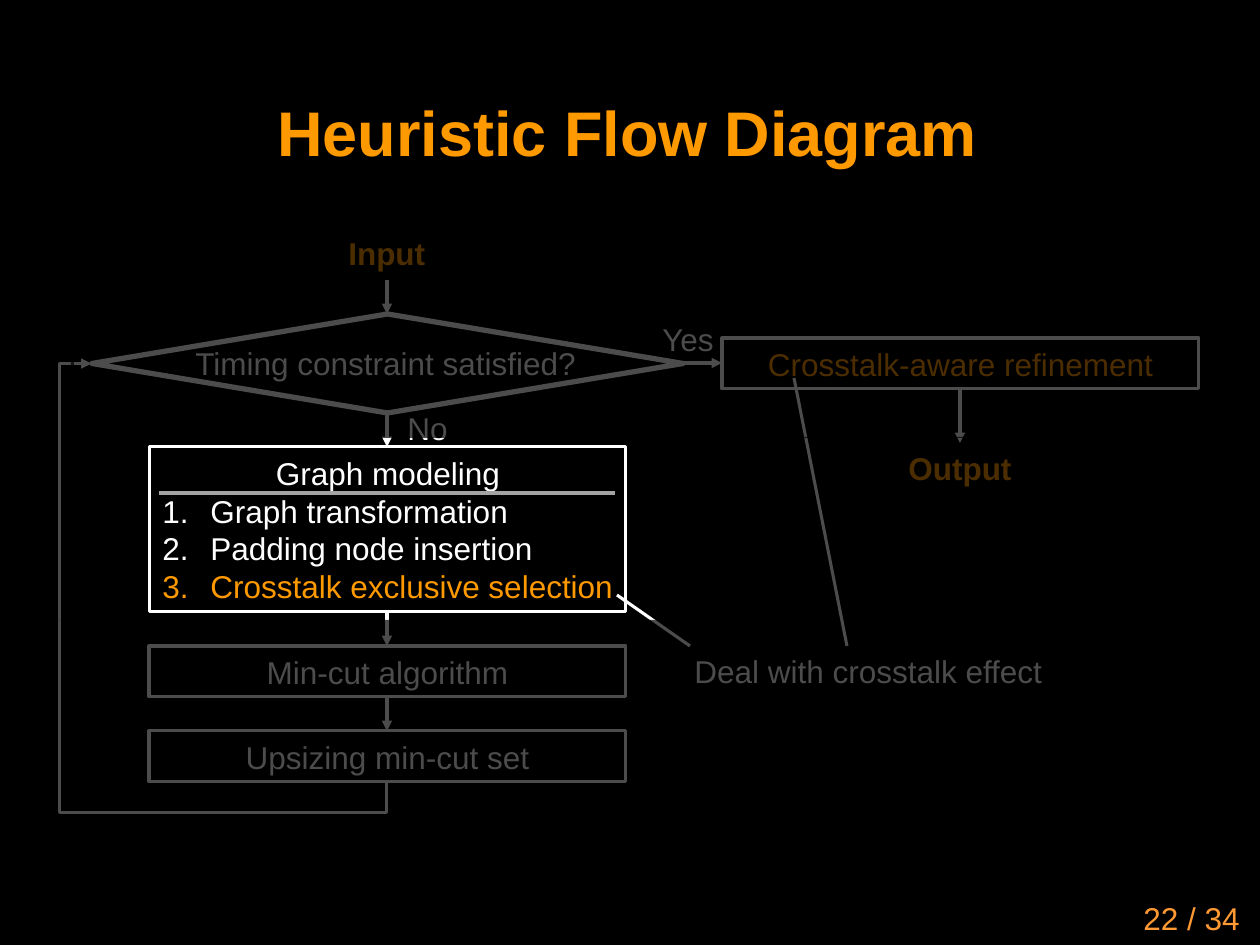
from dataclasses import dataclass
from lxml.etree import SubElement as Sub
from pptx import Presentation
from pptx.dml.color import RGBColor as Rgb
from pptx.enum.shapes import MSO_CONNECTOR as Conn, MSO_SHAPE as Kind
from pptx.enum.text import MSO_ANCHOR as Anchor, PP_ALIGN as Align
from pptx.oxml.ns import qn
from pptx.util import Emu, Pt


@dataclass(frozen=True)
class Theme:
    font: str = "Arial"
    back: str = "000000"
    ink: str = "FFFFFF"
    hot: str = "FF9900"
    page: str = "FF9933"
    rule: str = "A3A3A3"
    head: int = 36
    body: int = 18
    thin: float = 1.75
    thick: float = 3


T = Theme()
SCALE = 914400 / 126


def px(*vals):
    return [Emu(round(v * SCALE)) for v in vals]


def write(para, text, color=T.ink, size=T.body, bold=False, align=Align.LEFT):
    para.alignment = align
    run = para.add_run()
    run.text = text
    font = run.font
    font.name, font.size, font.bold = T.font, Pt(size), bold
    font.color.rgb = Rgb.from_string(color)


def label(slide, box, text, wrap=False, anchor=Anchor.TOP, **look):
    frame = slide.shapes.add_textbox(*px(*box)).text_frame
    frame.word_wrap = wrap
    frame.vertical_anchor = anchor
    write(frame.paragraphs[0], text, **look)


def stroke(line, color=T.ink, width=T.thin):
    line.color.rgb = Rgb.from_string(color)
    line.width = Pt(width)


def outline(slide, box, kind=Kind.RECTANGLE, width=T.thin):
    shape = slide.shapes.add_shape(kind, *px(*box))
    shape.shadow.inherit = False
    shape.fill.background()
    stroke(shape.line, width=width)
    return shape


def step(slide, box, text, color=T.ink):
    frame = outline(slide, box).text_frame
    frame.word_wrap = True
    write(frame.paragraphs[0], text, color, align=Align.CENTER)
    return frame


def number(frame, text, color=T.ink):
    para = frame.add_paragraph()
    write(para, text, color)
    props = para._p.get_or_add_pPr()
    inset, = px(48)
    props.set("marL", str(inset))
    props.set("indent", str(-inset))
    Sub(props, qn("a:buFont"), typeface=T.font)
    Sub(props, qn("a:buAutoNum"), type="arabicPeriod")


def link(slide, ends, color=T.ink, arrow=False, kind=Conn.STRAIGHT):
    line = slide.shapes.add_connector(kind, *px(*ends))
    stroke(line.line, color)
    props = line._element.spPr
    if arrow:
        Sub(props.find(qn("a:ln")), qn("a:tailEnd"), type="triangle")
    Sub(props, qn("a:effectLst"))
    return props


def loop(slide):
    props = link(slide, (448, 425, 30, 720), arrow=True, kind=Conn.ELBOW)
    props.find(qn("a:xfrm")).set("rot", "5400000")
    geom = props.find(qn("a:prstGeom"))
    geom.set("prst", "bentConnector4")
    guides = geom.find(qn("a:avLst"))
    if guides is None:
        guides = Sub(geom, qn("a:avLst"))
    for name, val in (("adj1", -7500), ("adj2", 110700)):
        Sub(guides, qn("a:gd"), name=name, fmla=f"val {val}")


def veil(slide, box):
    shape = slide.shapes.add_shape(Kind.RECTANGLE, *px(*box))
    shape.shadow.inherit = False
    shape.fill.solid()
    shape.fill.fore_color.rgb = Rgb.from_string(T.back)
    shape.line.fill.background()
    tint = shape._element.spPr.find(qn("a:solidFill"))[0]
    Sub(tint, qn("a:alpha"), val="70000")


def main():
    deck = Presentation()
    deck.slide_width, deck.slide_height = px(1260, 945)
    slide = deck.slides.add_slide(deck.slide_layouts[6])
    slide.background.fill.solid()
    slide.background.fill.fore_color.rgb = Rgb.from_string(T.back)

    label(slide, (92, 73, 1071, 117), "Heuristic Flow Diagram", wrap=True,
          anchor=Anchor.MIDDLE, color=T.hot, size=T.head, bold=True,
          align=Align.CENTER)
    label(slide, (336, 228, 103, 50), "Input", color=T.hot, bold=True)
    step(slide, (722, 338, 477, 51), "Crosstalk-aware refinement", T.hot)
    label(slide, (896, 443, 130, 50), "Output", color=T.hot, bold=True)
    outline(slide, (92, 314, 591, 99), Kind.DIAMOND, T.thick)
    label(slide, (183, 338, 410, 50), "Timing constraint satisfied?")

    graph = step(slide, (150, 447, 476, 165), "Graph modeling")
    number(graph, "Graph transformation")
    number(graph, "Padding node insertion")
    number(graph, "Crosstalk exclusive selection", T.hot)
    link(slide, (159, 493, 615, 493), T.rule)

    for row, text in enumerate(("Min-cut algorithm", "Upsizing min-cut set")):
        step(slide, (149, 646 + 85 * row, 477, 51), text)
    for top in (280, 413, 612, 697):
        link(slide, (387, top, 387, top + 34), arrow=True)
    link(slide, (683, 363, 722, 363), arrow=True)
    link(slide, (960, 389, 960, 443), arrow=True)
    loop(slide)

    label(slide, (650, 314, 77, 50), "Yes")
    label(slide, (395, 403, 66, 50), "No")
    label(slide, (682, 646, 383, 50), "Deal with crosstalk effect")
    link(slide, (794, 378, 847, 646))
    link(slide, (617, 595, 690, 646))

    for box in ((71, 205, 1145, 233), (49, 620, 1017, 246),
                (769, 437, 394, 183), (11, 350, 63, 270)):
        veil(slide, box)
    label(slide, (990, 893, 262, 63), "22 / 34", wrap=True, color=T.page,
          align=Align.RIGHT)
    deck.save("out.pptx")


if __name__ == "__main__":
    main()
